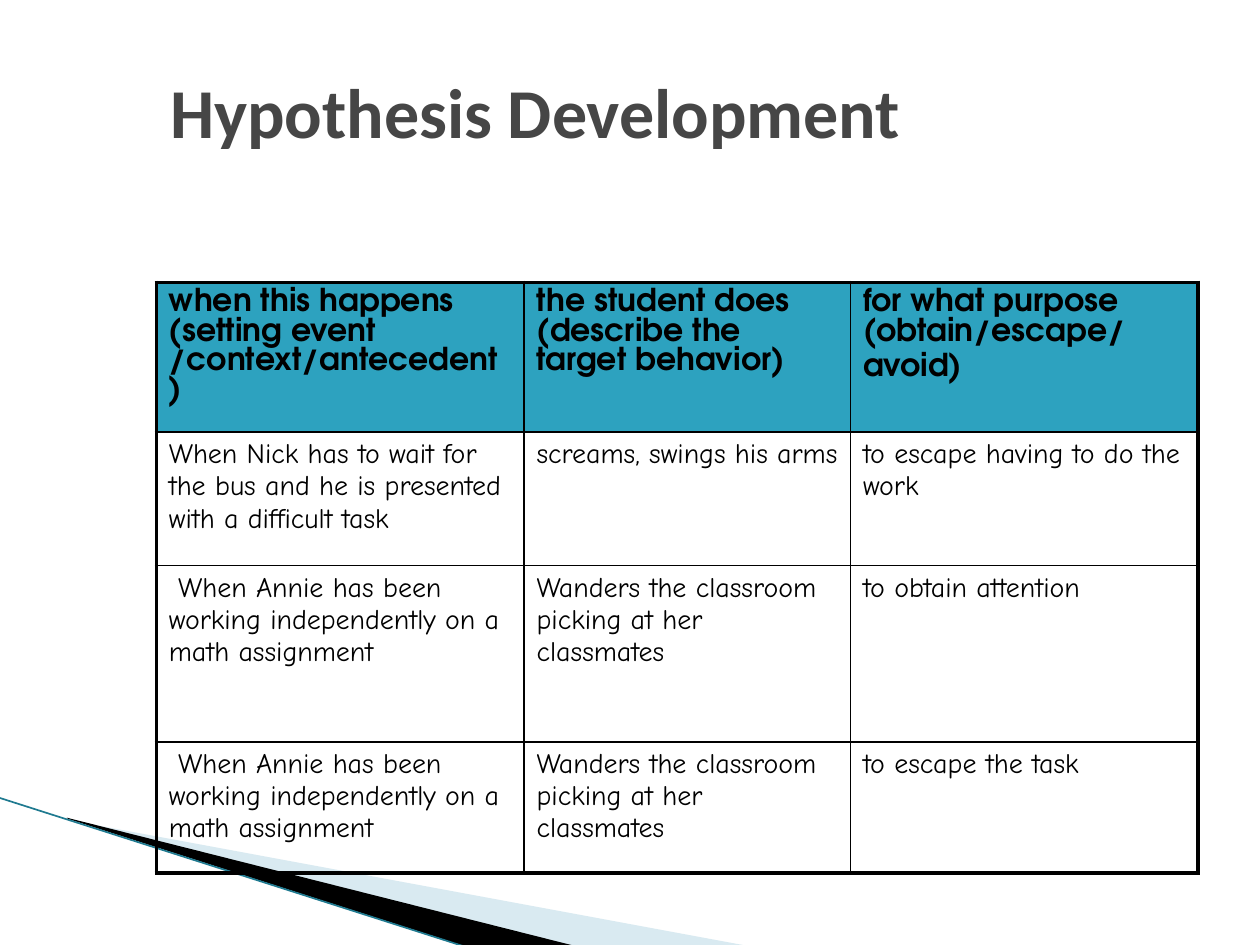
from lxml import etree
from pptx import Presentation
from pptx.dml.color import RGBColor
from pptx.enum.shapes import MSO_CONNECTOR
from pptx.enum.text import MSO_ANCHOR, PP_ALIGN
from pptx.oxml.ns import qn
from pptx.util import Pt

STRAIGHT = MSO_CONNECTOR.STRAIGHT
LEFT = PP_ALIGN.LEFT
MIDDLE = MSO_ANCHOR.MIDDLE

BLACK = RGBColor(0x00, 0x00, 0x00)
GREY = RGBColor(0x46, 0x46, 0x46)
TEAL = RGBColor(0x2D, 0xA2, 0xBF)
DARK_TEAL = RGBColor(0x1F, 0x7A, 0x90)
PALE_BLUE = RGBColor(0xA0, 0xCB, 0xDC)

COLS = (210.2, 186.5, 198.7)
ROWS = (85.7, 76.3, 100.8, 74.9)
ANNIE = " When Annie has been working independently on a math assignment"
WANDERS = "Wanders the classroom picking at her classmates"
CELLS = (
    ("when this happens (setting event /context/antecedent)",
     "the student does (describe the target behavior)",
     "for what purpose (obtain/escape/\navoid)"),
    ("When Nick has to wait for the bus and he is presented with a difficult task",
     "screams, swings his arms",
     "to escape having to do the work"),
    (ANNIE, WANDERS, "to obtain attention"),
    (ANNIE, WANDERS, "to escape the task"),
)


def write_text(tf, text, font, size, color=BLACK, bold=False):
    """Fill a text frame, one paragraph for each line of text."""
    for i, line in enumerate(text.split("\n")):
        p = tf.paragraphs[0] if i == 0 else tf.add_paragraph()
        p.alignment = LEFT
        p.space_before = Pt(0.2 * size if i else 0)
        r = p.add_run()
        r.text = line
        r.font.name = font
        r.font.size = Pt(size)
        r.font.bold = bold
        r.font.color.rgb = color


def add_wedge(slide, points, color, alpha=None):
    """Draw a filled polygon without outline."""
    (x, y), *rest = [(Pt(a), Pt(b)) for a, b in points]
    builder = slide.shapes.build_freeform(x, y)
    builder.add_line_segments(rest, close=True)
    sp = builder.convert_to_shape()
    sp.shadow.inherit = False
    sp.fill.solid()
    sp.fill.fore_color.rgb = color
    sp.line.fill.background()
    if alpha is not None:
        clr = sp._element.spPr.find(".//" + qn("a:srgbClr"))
        etree.SubElement(clr, qn("a:alpha"), val=str(alpha * 1000))


def add_line(slide, x1, y1, x2, y2, color, width):
    """Draw a straight line without shadow."""
    line = slide.shapes.add_connector(STRAIGHT, Pt(x1), Pt(y1), Pt(x2), Pt(y2))
    line.line.color.rgb = color
    line.line.width = Pt(width)
    etree.SubElement(line._element.spPr, qn("a:effectLst"))


def set_borders(cell, widths):
    """Give a cell black borders from widths in the order left, right, top, bottom."""
    tcPr = cell._tc.get_or_add_tcPr()
    for side, width in zip("LRTB", widths):
        ln = etree.SubElement(tcPr, qn("a:ln" + side), w=str(Pt(width)))
        fill = etree.SubElement(ln, qn("a:solidFill"))
        etree.SubElement(fill, qn("a:srgbClr"), val=str(BLACK))


def add_hypothesis_table(slide):
    """Add the table with a teal header and a thick outer frame."""
    frame = slide.shapes.add_table(len(ROWS), len(COLS), Pt(89.3), Pt(161.3),
                                   Pt(sum(COLS)), Pt(sum(ROWS)))
    table = frame.table
    table.first_row = table.horz_banding = False
    for column, width in zip(table.columns, COLS):
        column.width = Pt(width)
    for row, height in zip(table.rows, ROWS):
        row.height = Pt(height)
    for i, texts in enumerate(CELLS):
        for j, text in enumerate(texts):
            cell = table.cell(i, j)
            outer = (j == 0, j == len(COLS) - 1, i == 0, i == len(ROWS) - 1)
            set_borders(cell, [2.25 if edge else 1 for edge in outer])
            if i == 0:
                cell.fill.solid()
                cell.fill.fore_color.rgb = TEAL
                write_text(cell.text_frame, text, "TeX Gyre Adventor", 18, bold=True)
            else:
                cell.fill.background()
                write_text(cell.text_frame, text, "Comic Neue", 16)


def add_title(slide, text):
    """Place and format the title placeholder."""
    title = slide.shapes.title
    title.left, title.top, title.width, title.height = Pt(90), Pt(18), Pt(612), Pt(90)
    title.text_frame.vertical_anchor = MIDDLE
    write_text(title.text_frame, text, "Calibri", 40, color=GREY, bold=True)


def main():
    """Build and save the slide."""
    prs = Presentation()
    prs.slide_width, prs.slide_height = Pt(720), Pt(540)
    slide = prs.slides.add_slide(prs.slide_layouts[5])
    add_wedge(slide, [(39.6, 468.7), (428.4, 540.7), (328.3, 540.7), (39.6, 468)],
              PALE_BLUE, alpha=40)
    add_wedge(slide, [(38.2, 467.3), (329, 540.7), (267.8, 541.4), (38.9, 468)], BLACK)
    add_line(slide, -0.7, 455.8, 267.1, 541.4, DARK_TEAL, 0.95)
    add_title(slide, "Hypothesis Development")
    add_hypothesis_table(slide)
    prs.save("out.pptx")


if __name__ == "__main__":
    main()
